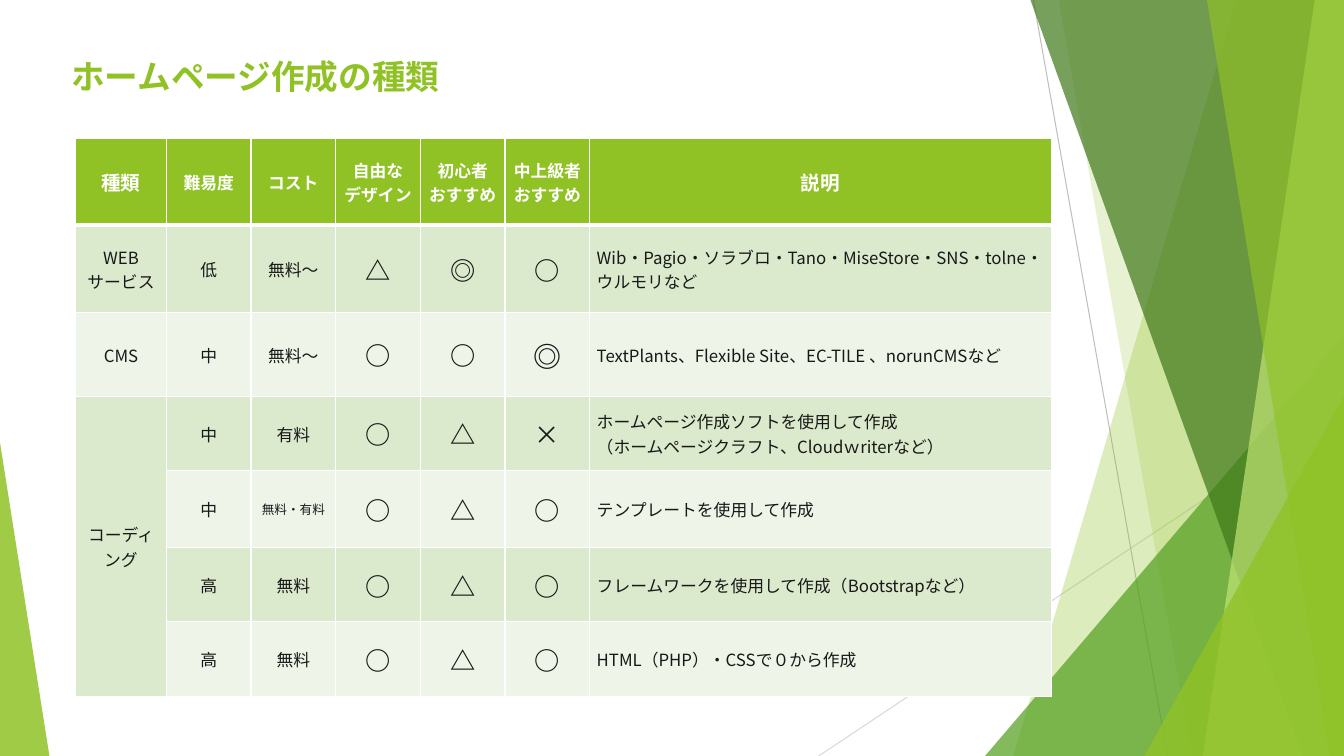
from pptx import Presentation
from pptx.dml.color import RGBColor
from pptx.enum.shapes import MSO_CONNECTOR
from pptx.enum.text import MSO_ANCHOR, PP_ALIGN
from pptx.oxml.ns import qn
from pptx.util import Inches, Pt
from lxml.etree import SubElement

# Content
FONT = "Noto Sans CJK JP"
WIDTH, HEIGHT = 13.33, 7.5
GREEN, WHITE, INK = "90C226", "FFFFFF", "181818"
BANDS = ["DBE9CD", "EEF4E8"]

TITLE = "ホームページ作成の種類"
ROWS = [
    ["種類", "難易度", "コスト", "自由な\nデザイン", "初心者\nおすすめ", "中上級者\nおすすめ", "説明"],
    ["WEB\nサービス", "低", "無料～", "△", "◎", "○",
     "Wib・Pagio・ソラブロ・Tano・MiseStore・SNS・tolne・ウルモリなど"],
    ["CMS", "中", "無料～", "○", "○", "◎",
     "TextPlants、Flexible Site、EC-TILE 、norunCMSなど"],
    ["コーディング", "中", "有料", "○", "△", "×",
     "ホームページ作成ソフトを使用して作成\n（ホームページクラフト、Cloudｗriterなど）"],
    ["", "中", "無料・有料", "○", "△", "○", "テンプレートを使用して作成"],
    ["", "高", "無料", "○", "△", "○", "フレームワークを使用して作成（Bootstrapなど）"],
    ["", "高", "無料", "○", "△", "○", "HTML（PHP）・CSSで０から作成"],
]
COLUMN_WIDTHS = [0.9] + [0.84] * 5 + [4.58]
ROW_HEIGHTS = [0.86, 0.87, 0.83, 0.74, 0.76, 0.74, 0.74]
CODING_ROW, LAST_COLUMN = 3, len(COLUMN_WIDTHS) - 1
SPECIAL_SIZES = {(0, 0): 14, (0, LAST_COLUMN): 14, (2, 5): 20, (4, 2): 9}

# Thin lines: start, end, colour
RAYS = [
    ((8.12, HEIGHT), (WIDTH, 4.03), "D9D9D9"),
    ((10.25, 0), (11.58, HEIGHT), "BFBFBF"),
]
# Facets: top x, top y, bottom x, page edge they reach, colour, opacity in percent
FACETS = [
    (12.26, 0, 10.05, WIDTH, GREEN, 30),
    (10.5, 0, 11.82, WIDTH, GREEN, 20),
    (WIDTH, 3.33, 9.77, WIDTH, "54A021", 72),
    (10.22, 0, 12.92, WIDTH, "3F7819", 70),
    (13.04, 0, 11.93, WIDTH, "C0E474", 70),
    (11.97, 0, 13.19, WIDTH, GREEN, 65),
    (WIDTH, 3.93, 11.35, WIDTH, GREEN, 80),
    (0, 4.39, 0.49, 0, GREEN, 85),
]


def paint(color_format, value):
    color_format.rgb = RGBColor.from_string(value)


def write(frame, text, size, color, bold=False, align=PP_ALIGN.LEFT):
    frame.text = text
    for para in frame.paragraphs:
        para.alignment = align
        font = para.font
        font.name, font.size, font.bold = FONT, Pt(size), bold
        paint(font.color, color)
        defaults = para._p.pPr.find(qn("a:defRPr"))
        SubElement(defaults, qn("a:ea"), typeface=FONT)


def add_ray(page, start, end, color):
    ray = page.shapes.add_connector(MSO_CONNECTOR.STRAIGHT, *map(Inches, start + end))
    ray.line.width = Pt(0.75)
    paint(ray.line.color, color)
    SubElement(ray._element.spPr, qn("a:effectLst"))


def add_facet(page, top_x, top_y, bottom_x, edge, color, opacity):
    builder = page.shapes.build_freeform(Inches(top_x), Inches(top_y))
    corners = [(bottom_x, HEIGHT), (edge, HEIGHT), (edge, top_y)]
    builder.add_line_segments([(Inches(x), Inches(y)) for x, y in corners])
    facet = builder.convert_to_shape()
    facet.shadow.inherit = False
    facet.line.fill.background()
    facet.fill.solid()
    paint(facet.fill.fore_color, color)
    color_node = facet._element.spPr.find(".//" + qn("a:srgbClr"))
    SubElement(color_node, qn("a:alpha"), val=str(opacity * 1000))


def add_borders(cell, bottom_width):
    properties = cell._tc.get_or_add_tcPr()
    widths = {"lnL": 1, "lnR": 1, "lnT": 1, "lnB": bottom_width}
    for position, (side, width) in enumerate(widths.items()):
        border = SubElement(properties, qn("a:" + side), w=str(Pt(width)))
        fill = SubElement(border, qn("a:solidFill"))
        SubElement(fill, qn("a:srgbClr"), val=WHITE)
        properties.insert(position, border)


def style_cell(cell, text, row, column):
    header = row == 0
    symbol = not header and 3 <= column <= 5
    size = SPECIAL_SIZES.get((row, column), 18 if symbol else 12)
    centred = header or column < LAST_COLUMN
    write(cell.text_frame, text, size, WHITE if header else INK,
          bold=header or (symbol and text != "×"),
          align=PP_ALIGN.CENTER if centred else PP_ALIGN.LEFT)
    cell.vertical_anchor = MSO_ANCHOR.MIDDLE
    cell.margin_left = cell.margin_right = Inches(0.07)
    cell.margin_top, cell.margin_bottom = Inches(0.01), 0
    band = 0 if column == 0 and row >= CODING_ROW else (row - 1) % 2
    cell.fill.solid()
    paint(cell.fill.fore_color, GREEN if header else BANDS[band])
    add_borders(cell, 3 if header else 1)


def add_comparison(page):
    frame = page.shapes.add_table(
        len(ROWS), len(COLUMN_WIDTHS), Inches(0.75), Inches(1.37),
        Inches(sum(COLUMN_WIDTHS)), Inches(sum(ROW_HEIGHTS)))
    table = frame.table
    table.first_row = table.horz_banding = False
    for column, width in zip(table.columns, COLUMN_WIDTHS):
        column.width = Inches(width)
    for row, height in zip(table.rows, ROW_HEIGHTS):
        row.height = Inches(height)
    for row, texts in enumerate(ROWS):
        for column, text in enumerate(texts):
            style_cell(table.cell(row, column), text, row, column)
    # One vertical label covers all coding rows
    coding = table.cell(CODING_ROW, 0)
    coding.merge(table.cell(len(ROWS) - 1, 0))
    coding._tc.get_or_add_tcPr().set("vert", "eaVert")


def main():
    deck = Presentation()
    deck.slide_width, deck.slide_height = Inches(WIDTH), Inches(HEIGHT)
    page = deck.slides.add_slide(deck.slide_layouts[6])

    # Background decoration
    for ray in RAYS:
        add_ray(page, *ray)
    for facet in FACETS:
        add_facet(page, *facet)

    # Table and title
    add_comparison(page)
    box = page.shapes.add_textbox(Inches(0.61), Inches(0.51), Inches(9.4), Inches(0.61))
    box.text_frame.word_wrap = True
    write(box.text_frame, TITLE, 24, GREEN, bold=True)

    deck.save("out.pptx")


if __name__ == "__main__":
    main()
